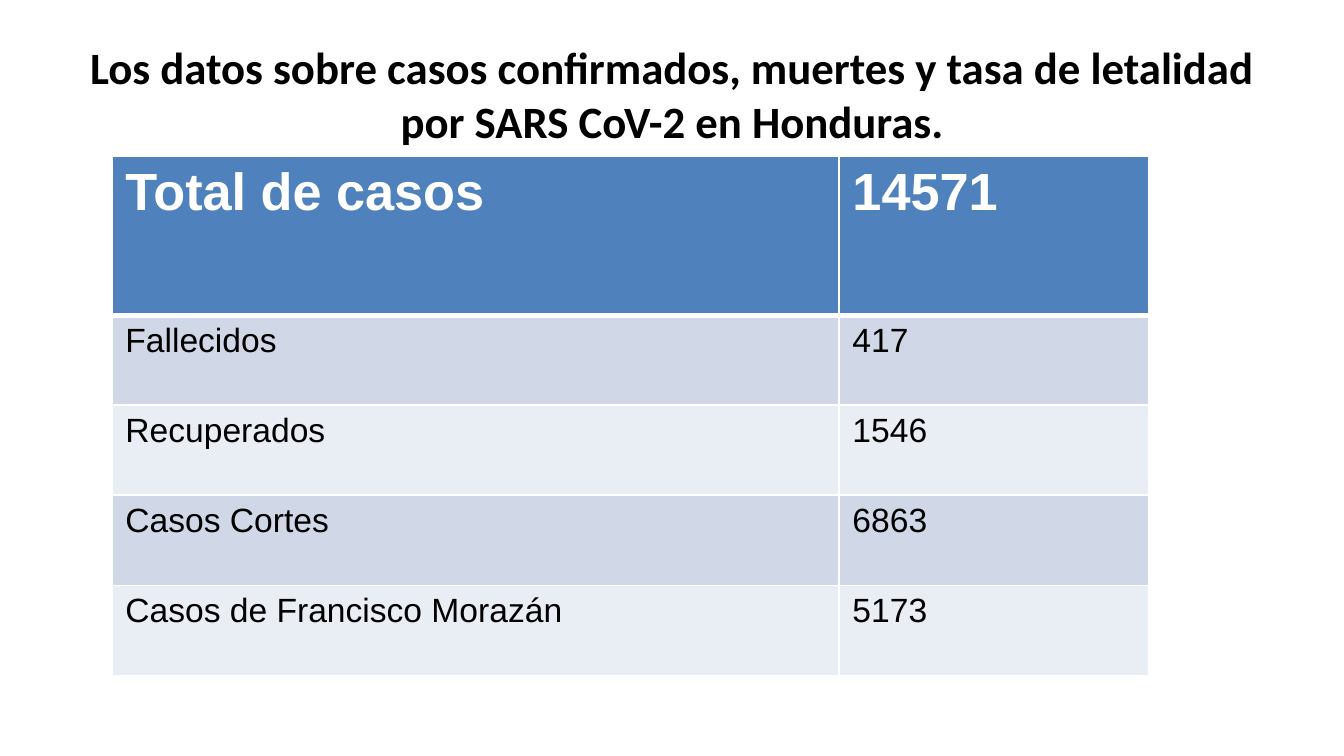
import pptx
import pptx.dml.color
import pptx.enum.text
import pptx.util
from lxml import etree

Pt = pptx.util.Pt
ENUM = pptx.enum.text
NS = "http://schemas.openxmlformats.org/drawingml/2006/main"
HUES = {"ink": "000000", "white": "FFFFFF", "head": "4F81BD",
        "odd": "D0D8E8", "even": "E9EDF4"}
DATA = [
    ("Total de casos", "14571"),
    ("Fallecidos", "417"),
    ("Recuperados", "1546"),
    ("Casos Cortes", "6863"),
    ("Casos de Francisco Morazán", "5173"),
]


def tint(name):
    return pptx.dml.color.RGBColor.from_string(HUES[name])


def write(frame, text, font="Arial", size=18, hue="ink", bold=False, align=None):
    para = frame.paragraphs[0]
    para.alignment = align
    run = para.add_run()
    run.text = text
    run.font.name = font
    run.font.size = Pt(size)
    run.font.bold = bold
    run.font.color.rgb = tint(hue)


def edge(cell, side, width):
    """Draw a white border on one side (L, R, T or B) of a cell."""
    props = cell._tc.get_or_add_tcPr()
    line = etree.SubElement(props, f"{{{NS}}}ln{side}", w=str(Pt(width)))
    fill = etree.SubElement(line, f"{{{NS}}}solidFill")
    etree.SubElement(fill, f"{{{NS}}}srgbClr", val=HUES["white"])


class Deck:
    def __init__(self, width, height):
        self.show = pptx.Presentation()
        self.show.slide_width = Pt(width)
        self.show.slide_height = Pt(height)
        self.slide = self.show.slides.add_slide(self.show.slide_layouts[5])

    def title(self, text, left, top, width, height):
        shape = self.slide.shapes.title
        shape.left, shape.top = Pt(left), Pt(top)
        shape.width, shape.height = Pt(width), Pt(height)
        frame = shape.text_frame
        frame.word_wrap = True
        frame.auto_size = ENUM.MSO_AUTO_SIZE.NONE
        frame.vertical_anchor = ENUM.MSO_ANCHOR.MIDDLE
        write(frame, text, font="Calibri", size=24, bold=True,
              align=ENUM.PP_ALIGN.CENTER)

    def table(self, data, left, top, cols, rows):
        grid = self.slide.shapes.add_table(
            len(rows), len(cols), Pt(left), Pt(top),
            Pt(sum(cols)), Pt(sum(rows))).table
        for col, width in zip(grid.columns, cols):
            col.width = Pt(width)
        for i, (row, height) in enumerate(zip(grid.rows, rows)):
            row.height = Pt(height)
            for cell, text in zip(row.cells, data[i]):
                self.cell(cell, text, i)

    def cell(self, cell, text, row):
        head = row == 0
        for side in "LRTB":
            thick = (row, side) in ((0, "B"), (1, "T"))
            edge(cell, side, 3 if thick else 1)
        cell.fill.solid()
        cell.fill.fore_color.rgb = tint(
            "head" if head else "odd" if row % 2 else "even")
        write(cell.text_frame, text, size=28 if head else 18,
              hue="white" if head else "ink", bold=head)

    def save(self):
        self.show.save("out.pptx")


def main():
    deck = Deck(720, 405)
    deck.title("Los datos sobre casos confirmados, muertes y tasa de letalidad "
               "por SARS CoV-2 en Honduras.", 36, 16.5, 648, 67.5)
    deck.table(DATA, 60, 83.8, cols=[389.5, 166], rows=[85] + [48.3] * 4)
    deck.save()


if __name__ == "__main__":
    main()
